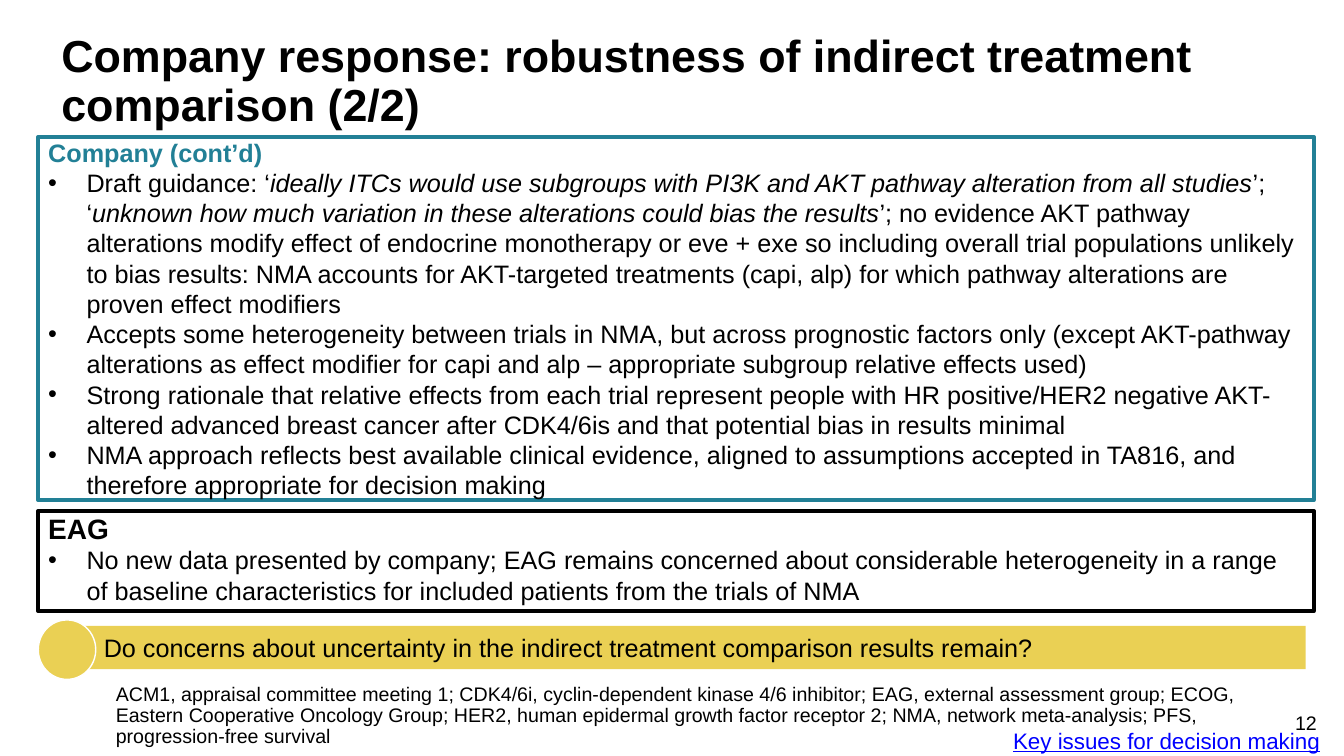
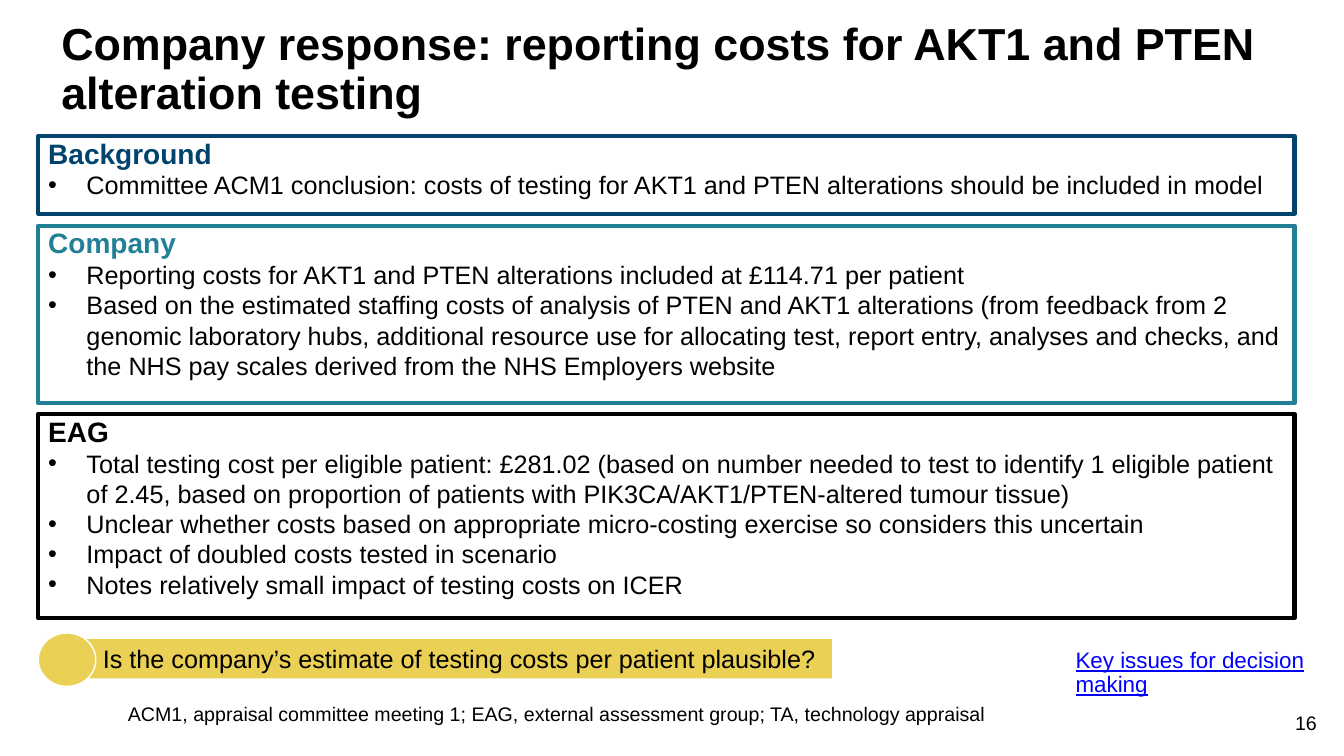
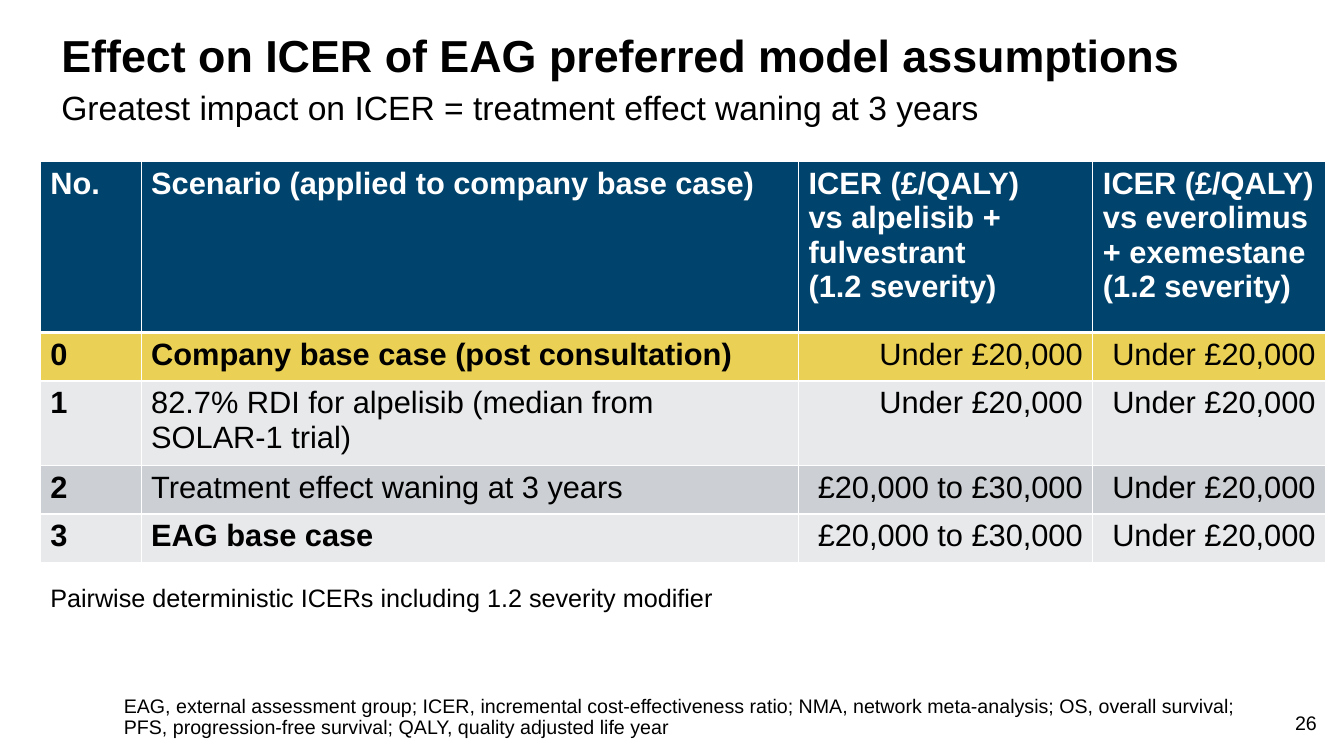
from lxml import etree
from pptx import Presentation
from pptx.dml.color import RGBColor
from pptx.enum.shapes import MSO_SHAPE
from pptx.enum.text import MSO_ANCHOR, PP_ALIGN
from pptx.oxml.ns import qn
from pptx.util import Inches, Pt

RECTANGLE, OVAL = MSO_SHAPE.RECTANGLE, MSO_SHAPE.OVAL
TOP, MIDDLE = MSO_ANCHOR.TOP, MSO_ANCHOR.MIDDLE
LEFT, RIGHT = PP_ALIGN.LEFT, PP_ALIGN.RIGHT

COLORS = {
    "black": "000000", "white": "FFFFFF", "navy": "00436C", "teal": "228096",
    "yellow": "EAD054", "pale": "E7E9EB", "grey": "CCCFD4", "link": "0000FF",
}
FONT = "Arial"
PANEL_LEFT = 0.38
BULLET_INDENT = 0.38

# Text styles shared by the slides
TITLE = {"size": 32, "bold": True, "line_spacing": 0.9}
SUBTITLE = {"size": 24, "line_spacing": 0.9}
ABBREVIATIONS = {"size": 14, "line_spacing": 0.9}
PAGE_NUMBER = {"size": 14, "alignment": RIGHT}
LINK = {"size": 16, "color": "link", "underline": True, "line_spacing": 0.9}
BODY = {"size": 18}


def rgb(name):
    return RGBColor.from_string(COLORS[name])


def write(frame, content, style, bullet=False):
    """Add one paragraph; in a tuple every second piece is italic."""
    paragraph = frame.paragraphs[0]
    if paragraph.runs:
        paragraph = frame.add_paragraph()
    paragraph.alignment = style.get("alignment", LEFT)
    paragraph.line_spacing = style.get("line_spacing", 1.0)
    if bullet:
        properties = paragraph._p.get_or_add_pPr()
        properties.set("marL", str(Inches(BULLET_INDENT)))
        properties.set("indent", str(-Inches(BULLET_INDENT)))
        etree.SubElement(properties, qn("a:buFont")).set("typeface", FONT)
        etree.SubElement(properties, qn("a:buChar")).set("char", "•")
    pieces = content if isinstance(content, tuple) else (content,)
    for index, piece in enumerate(pieces):
        run = paragraph.add_run()
        run.text = piece
        values = {
            "name": FONT, "size": Pt(style["size"]), "italic": index % 2 == 1,
            "bold": style.get("bold", False),
            "underline": style.get("underline", False),
        }
        for name, value in values.items():
            setattr(run.font, name, value)
        run.font.color.rgb = rgb(style.get("color", "black"))


slides = [
    {
        "number": "12",
        "title": ("Company response: robustness of indirect treatment comparison (2/2)",
                  (0.51, 0.29, 12.3, 0.65)),
        "texts": [
            ("ACM1, appraisal committee meeting 1; CDK4/6i, cyclin-dependent kinase 4/6 "
             "inhibitor; EAG, external assessment group; ECOG, Eastern Cooperative Oncology "
             "Group; HER2, human epidermal growth factor receptor 2; NMA, network "
             "meta-analysis; PFS, progression-free survival",
             (1.05, 6.74, 11.76, 0.67), ABBREVIATIONS),
            ("Key issues for decision making", (9.06, 7.19, 4.13, 0.28),
             {**LINK, "alignment": RIGHT}),
        ],
        "panel_width": 12.65,
        "panels": [
            ("Company (cont’d)", 18, "teal", 1.36, 3.6, [
                ("Draft guidance: ‘",
                 "ideally ITCs would use subgroups with PI3K and AKT pathway alteration "
                 "from all studies",
                 "’; ‘",
                 "unknown how much variation in these alterations could bias the results",
                 "’; no evidence AKT pathway alterations modify effect of endocrine "
                 "monotherapy or eve + exe so including overall trial populations unlikely "
                 "to bias results: NMA accounts for AKT-targeted treatments (capi, alp) for "
                 "which pathway alterations are proven effect modifiers"),
                "Accepts some heterogeneity between trials in NMA, but across prognostic "
                "factors only (except AKT-pathway alterations as effect modifier for capi "
                "and alp – appropriate subgroup relative effects used)",
                "Strong rationale that relative effects from each trial represent people "
                "with HR positive/HER2 negative AKT-altered advanced breast cancer after "
                "CDK4/6is and that potential bias in results minimal",
                "NMA approach reflects best available clinical evidence, aligned to "
                "assumptions accepted in TA816, and therefore appropriate for decision making",
            ]),
            ("EAG", 20, "black", 5.07, 0.99, [
                "No new data presented by company; EAG remains concerned about considerable "
                "heterogeneity in a range of baseline characteristics for included patients "
                "from the trials of NMA",
            ]),
        ],
        "question": ("Do concerns about uncertainty in the indirect treatment comparison "
                     "results remain?",
                     (0.75, 6.21, 12.2, 0.43), (PANEL_LEFT, 6.15, 0.57, 0.59)),
    },
    {
        "number": "16",
        "title": ("Company response: reporting costs for AKT1 and PTEN alteration testing",
                  (0.51, 0.17, 12.3, 1.07)),
        "texts": [
            ("ACM1, appraisal committee meeting 1; EAG, external assessment group; TA, "
             "technology appraisal", (1.17, 6.94, 9.94, 0.4), ABBREVIATIONS),
            ("Key issues for decision making", (10.57, 6.39, 2.7, 0.62), LINK),
        ],
        "panel_width": 12.46,
        "panels": [
            ("Background", 20, "navy", 1.35, 0.77, [
                "Committee ACM1 conclusion: costs of testing for AKT1 and PTEN alterations "
                "should be included in model",
            ]),
            ("Company", 20, "teal", 2.24, 1.76, [
                "Reporting costs for AKT1 and PTEN alterations included at £114.71 per patient",
                "Based on the estimated staffing costs of analysis of PTEN and AKT1 "
                "alterations (from feedback from 2 genomic laboratory hubs, additional "
                "resource use for allocating test, report entry, analyses and checks, and "
                "the NHS pay scales derived from the NHS Employers website",
            ]),
            ("EAG", 20, "black", 4.11, 2.02, [
                "Total testing cost per eligible patient: £281.02 (based on number needed to "
                "test to identify 1 eligible patient of 2.45, based on proportion of "
                "patients with PIK3CA/AKT1/PTEN-altered tumour tissue)",
                "Unclear whether costs based on appropriate micro-costing exercise so "
                "considers this uncertain",
                "Impact of doubled costs tested in scenario",
                "Notes relatively small impact of testing costs on ICER",
            ]),
        ],
        "question": ("Is the company’s estimate of testing costs per patient plausible?",
                     (0.74, 6.34, 7.51, 0.39), (PANEL_LEFT, 6.28, 0.57, 0.53)),
    },
    {
        "number": "26",
        "title": ("Effect on ICER of EAG preferred model assumptions",
                  (0.51, 0.29, 12.82, 0.65)),
        "texts": [
            ("Greatest impact on ICER = treatment effect waning at 3 years",
             (0.51, 0.86, 12.21, 0.5), SUBTITLE),
            ("Pairwise deterministic ICERs including 1.2 severity modifier",
             (0.4, 5.73, 12.42, 0.4), BODY),
            ("EAG, external assessment group; ICER, incremental cost-effectiveness ratio; "
             "NMA, network meta-analysis; OS, overall survival; PFS, progression-free "
             "survival; QALY, quality adjusted life year",
             (1.13, 6.86, 11.66, 0.64), ABBREVIATIONS),
        ],
    },
]

presentation = Presentation()
presentation.slide_width = Inches(13.33)
presentation.slide_height = Inches(7.5)
blank_layout = presentation.slide_layouts[6]

for content in slides:
    slide = presentation.slides.add_slide(blank_layout)

    # Title, page number and loose texts
    texts = [
        (*content["title"], TITLE),
        (content["number"], (12.65, 7, 0.51, 0.4), PAGE_NUMBER),
        *content["texts"],
    ]
    for text, box, style in texts:
        frame = slide.shapes.add_textbox(*map(Inches, box)).text_frame
        frame.word_wrap = True
        write(frame, text, style)

    # Outlined panels
    for heading, size, color, top, height, bullets in content.get("panels", []):
        box = (PANEL_LEFT, top, content["panel_width"], height)
        panel = slide.shapes.add_shape(RECTANGLE, *map(Inches, box))
        panel.shadow.inherit = False
        panel.fill.background()
        panel.line.color.rgb = rgb(color)
        panel.line.width = Pt(3)
        frame = panel.text_frame
        frame.word_wrap = True
        frame.vertical_anchor = TOP
        frame.margin_top = frame.margin_bottom = 0
        write(frame, heading, {"size": size, "bold": True, "color": color})
        for bullet in bullets:
            write(frame, bullet, BODY, bullet=True)

    # Question bar with its round marker
    if "question" in content:
        question, bar_box, marker_box = content["question"]
        group = slide.shapes.add_group_shape()
        bar = group.shapes.add_shape(RECTANGLE, *map(Inches, bar_box))
        marker = group.shapes.add_shape(OVAL, *map(Inches, marker_box))
        for shape in (bar, marker):
            shape.shadow.inherit = False
            shape.fill.solid()
            shape.fill.fore_color.rgb = rgb("yellow")
        bar.line.fill.background()
        marker.line.color.rgb = rgb("white")
        marker.line.width = Pt(1)
        frame = bar.text_frame
        frame.word_wrap = True
        frame.vertical_anchor = MIDDLE
        frame.margin_left = Inches(0.28)
        write(frame, question, BODY)

# Scenario table on the last slide
UNDER, BETWEEN = "Under £20,000", "£20,000 to £30,000"
column_widths = [1, 6.52, 2.92, 2.31]
# fill, height, whether the scenario is bold, cells
rows = [
    ("navy", 1.7, True, ["No.", "Scenario (applied to company base case)",
                         "ICER (£/QALY)\nvs alpelisib + fulvestrant\n(1.2 severity)",
                         "ICER (£/QALY) vs everolimus + exemestane\n(1.2 severity)"]),
    ("yellow", 0.48, True, ["0", "Company base case (post consultation)", UNDER, UNDER]),
    ("pale", 0.84, False, ["1", "82.7% RDI for alpelisib (median from SOLAR-1 trial)",
                           UNDER, UNDER]),
    ("grey", 0.48, False, ["2", "Treatment effect waning at 3 years", BETWEEN, UNDER]),
    ("pale", 0.48, True, ["3", "EAG base case", BETWEEN, UNDER]),
]
table_box = (0.4, 1.6, sum(column_widths), sum(row[1] for row in rows))
table = slide.shapes.add_table(len(rows), len(column_widths), *map(Inches, table_box)).table
table.horz_banding = False
for column, width in zip(table.columns, column_widths):
    column.width = Inches(width)
for row_index, (fill, height, bold_scenario, cells) in enumerate(rows):
    table.rows[row_index].height = Inches(height)
    header = row_index == 0
    for column_index, text in enumerate(cells):
        cell = table.cell(row_index, column_index)
        cell.fill.solid()
        cell.fill.fore_color.rgb = rgb(fill)
        style = {
            "size": 22,
            "color": "white" if header else "black",
            "bold": header or column_index == 0 or (column_index == 1 and bold_scenario),
            "alignment": RIGHT if column_index > 1 and not header else LEFT,
        }
        for line in text.split("\n"):
            write(cell.text_frame, line, style)
        # White borders, thicker under the header
        borders = {"a:lnL": 1, "a:lnR": 1, "a:lnT": 3 if row_index == 1 else 1,
                   "a:lnB": 3 if header else 1}
        properties = cell._tc.get_or_add_tcPr()
        for position, (tag, width) in enumerate(borders.items()):
            border = etree.Element(qn(tag), w=str(Pt(width)))
            solid = etree.SubElement(border, qn("a:solidFill"))
            etree.SubElement(solid, qn("a:srgbClr")).set("val", COLORS["white"])
            properties.insert(position, border)

presentation.save("out.pptx")
